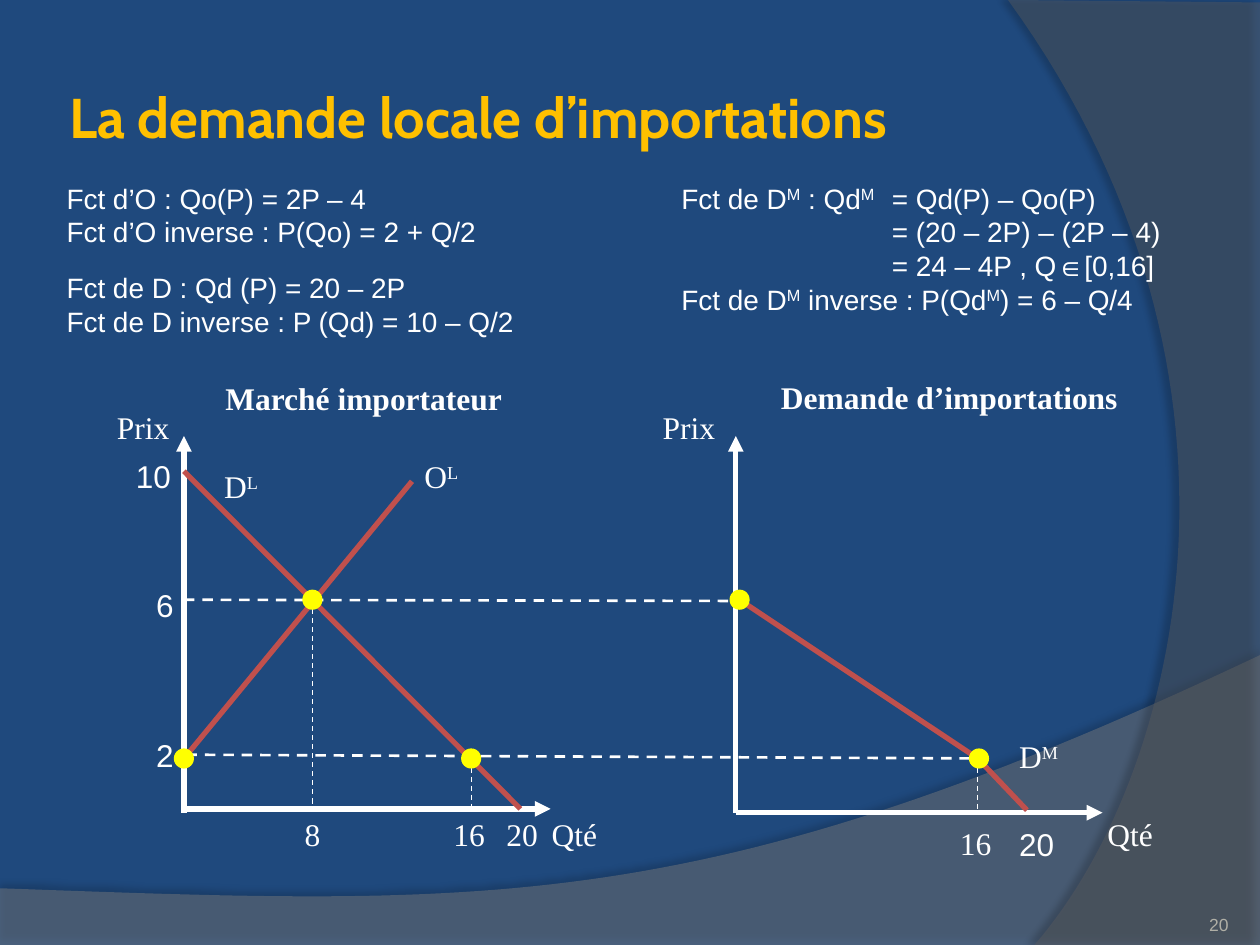
from lxml.etree import SubElement
from pptx import Presentation
from pptx.dml.color import RGBColor
from pptx.enum.dml import MSO_LINE
from pptx.enum.shapes import MSO_CONNECTOR, MSO_SHAPE
from pptx.enum.text import MSO_ANCHOR, PP_ALIGN
from pptx.oxml.ns import qn
from pptx.util import Inches, Pt

NAVY = RGBColor(0x1F, 0x49, 0x7D)
WHITE = RGBColor(0xFF, 0xFF, 0xFF)
GOLD = RGBColor(0xFF, 0xC0, 0x00)
YELLOW = RGBColor(0xFF, 0xFF, 0x00)
RED = RGBColor(0xC0, 0x50, 0x4D)
GREY = RGBColor(0x7F, 0x7F, 0x7F)
DARK_GREY = RGBColor(0x5E, 0x5E, 0x5E)
PALE_GREY = RGBColor(0xB0, 0xAF, 0xA6)

W, H = 10, 7.5
ROW = 0.4
DOT = 0.16
X_LEFT, X_RIGHT = 1.46, 5.84
Y_TOP, Y_BASE, Y_FOOT = 3.46, 6.42, 6.45
Y_SIX, Y_TWO = 4.76, 6.02
X_8, X_16, X_20 = 2.48, 3.74, 4.13
XM_0, XM_16, XM_20 = 5.87, 7.76, 8.15
AXIS_LENGTH = 2.91

SERIF = {"name": "Times New Roman", "size": Pt(18)}
SERIF_BOLD = {**SERIF, "bold": True}
SANS = {"name": "Arial", "size": Pt(18)}
FORMULA = {"name": "Arial", "size": Pt(16)}
TITLE = {"name": "Cabin", "size": Pt(32), "bold": True}
NUMBER = {"name": "Arial", "size": Pt(10)}

AXIS = {"width": Pt(3), "color": WHITE, "arrow": True}
CURVE = {"width": Pt(3), "color": RED}
LEVEL = {"width": Pt(1.5), "color": WHITE, "dash": True}
DROP = {"width": Pt(0.75), "color": WHITE, "dash": True}

WAVES = [
    {"start": (0, 7.05), "corners": [(0, H), (W, H), (W, 5.2)],
     "curve": [(5.59, 7.29), (3.91, 7.19), (0, 7.05)], "end": [],
     "color": GREY, "alpha": 45, "shadow": (35, 4, 3.5, 270)},
    {"start": (W, 0.02), "corners": [(W, H), (8.21, H)],
     "curve": [(9.35, 6.19), (10.18, 3), (8, 0)], "end": [(W, 0.02)],
     "color": DARK_GREY, "alpha": 40, "shadow": (45, 4, 4, 180)},
]

LINES = [
    (AXIS, (X_LEFT, Y_BASE), (X_LEFT + AXIS_LENGTH, Y_BASE)),
    (AXIS, (X_LEFT, Y_FOOT), (X_LEFT, Y_TOP)),
    (AXIS, (X_RIGHT, Y_FOOT), (X_RIGHT + AXIS_LENGTH, Y_FOOT)),
    (AXIS, (X_RIGHT, Y_FOOT), (X_RIGHT, Y_TOP)),
    (CURVE, (X_LEFT, Y_TWO), (3.27, 3.82)),
    (CURVE, (X_LEFT, 3.74), (X_20, Y_BASE)),
    (LEVEL, (X_LEFT, Y_SIX), (XM_0, 4.77)),
    (LEVEL, (1.48, 5.99), (7.85, Y_TWO)),
    (DROP, (X_8, Y_SIX), (X_8, Y_BASE)),
    (DROP, (X_16, Y_TWO), (X_16, Y_BASE)),
    (DROP, (XM_16, Y_TWO), (XM_16, Y_BASE)),
    (CURVE, (XM_0, Y_SIX), (XM_16, Y_TWO)),
    (CURVE, (XM_16, Y_TWO), (XM_20, 6.43)),
]

DOTS = [(X_LEFT, Y_TWO), (X_16, Y_TWO), (XM_0, Y_SIX), (X_8, Y_SIX), (7.77, Y_TWO)]

TEXTS = [
    (1.69, 2.96, 2.42, SERIF_BOLD, ["Marché importateur"]),
    (6.1, 2.95, 2.9, SERIF_BOLD, ["Demande d’importations"]),
    (0.83, 3.19, 0.62, SERIF, ["Prix"]),
    (5.16, 3.19, 0.62, SERIF, ["Prix"]),
    (4.28, Y_BASE, 0.57, SERIF, ["Qté"]),
    (8.69, Y_BASE, 0.57, SERIF, ["Qté"]),
    (0.98, 3.58, 0.48, SANS, ["10"]),
    (1.14, 4.6, 0.34, SANS, ["6"]),
    (1.14, 5.79, 0.34, SANS, ["2"]),
    (2.32, Y_BASE, 0.33, SERIF, ["8"]),
    (3.5, Y_BASE, 0.45, SERIF, ["16"]),
    (3.92, Y_BASE, 0.45, SERIF, ["20"]),
    (7.52, 6.49, 0.45, SERIF, ["16"]),
    (7.99, 6.5, 0.55, SANS, ["20"]),
    (1.68, 3.66, 0.49, SERIF, ["D^L"]),
    (3.27, 3.58, 0.49, SERIF, ["O^L"]),
    (7.99, 5.8, 0.53, SERIF, ["D^M"]),
    (0.43, 1.39, 3.5, FORMULA, ["Fct d’O : Qo(P) = 2P – 4", "Fct d’O inverse : P(Qo) = 2 + Q/2"]),
    (0.43, 2.1, 3.8, FORMULA, ["Fct de D : Qd (P) = 20 – 2P", "Fct de D inverse : P (Qd) = 10 – Q/2"]),
    (5.31, 1.39, 4.57, FORMULA, [
        "Fct de D^M^ : Qd^M^ \t= Qd(P) – Qo(P)",
        "\t= (20 – 2P) – (2P – 4)",
        "\t= 24 – 4P , Q∈[0,16]",
        "Fct de D^M^ inverse : P(Qd^M^) = 6 – Q/4"]),
]


def bezier(points, steps=60):
    for i in range(1, steps + 1):
        t = i / steps
        weights = ((1 - t) ** 3, 3 * t * (1 - t) ** 2, 3 * t * t * (1 - t), t ** 3)
        yield tuple(sum(w * p[axis] for w, p in zip(weights, points)) for axis in (0, 1))


def add_wave(s, wave):
    bend = bezier([wave["corners"][-1], *wave["curve"]])
    points = [*wave["corners"], *bend, *wave["end"]]
    builder = s.shapes.build_freeform(*map(Inches, wave["start"]), scale=1.0)
    builder.add_line_segments([(Inches(x), Inches(y)) for x, y in points])
    sp = builder.convert_to_shape()
    sp.fill.solid()
    sp.fill.fore_color.rgb = wave["color"]
    sp.line.fill.background()
    sp.shadow.inherit = False
    spPr = sp._element.spPr
    color = spPr.find(qn("a:solidFill"))[0]
    SubElement(color, qn("a:alpha"), val=str(wave["alpha"] * 1000))
    alpha, blur, dist, angle = wave["shadow"]
    shadow = SubElement(spPr.find(qn("a:effectLst")), qn("a:outerShdw"),
                        blurRad=str(Pt(blur)), dist=str(Pt(dist)), dir=str(angle * 60000))
    black = SubElement(shadow, qn("a:srgbClr"), val="000000")
    SubElement(black, qn("a:alpha"), val=str(alpha * 1000))


def add_line(s, style, start, end):
    sp = s.shapes.add_connector(MSO_CONNECTOR.STRAIGHT, *map(Inches, start + end))
    sp.line.width = style["width"]
    sp.line.color.rgb = style["color"]
    if style.get("dash"):
        sp.line.dash_style = MSO_LINE.DASH
    if style.get("arrow"):
        SubElement(sp.line._get_or_add_ln(), qn("a:tailEnd"), type="triangle")
    SubElement(sp._element.spPr, qn("a:effectLst"))


def add_dot(s, x, y):
    box = (x - DOT / 2, y - DOT / 2, DOT, DOT)
    sp = s.shapes.add_shape(MSO_SHAPE.FLOWCHART_CONNECTOR, *map(Inches, box))
    sp.shadow.inherit = False
    sp.fill.solid()
    sp.fill.fore_color.rgb = YELLOW
    sp.line.fill.background()


def add_text(s, x, y, w, h, font, lines, color=WHITE, wrap=False, align=PP_ALIGN.LEFT, **frame):
    tf = s.shapes.add_textbox(*map(Inches, (x, y, w, h))).text_frame
    tf.word_wrap = wrap
    for key, value in frame.items():
        setattr(tf, key, value)
    for i, line in enumerate(lines):
        p = tf.paragraphs[0] if i == 0 else tf.add_paragraph()
        p.alignment = align
        if "\t" in line:
            tabs = SubElement(p._p.get_or_add_pPr(), qn("a:tabLst"))
            SubElement(tabs, qn("a:tab"), pos=str(Inches(1.67)), algn="l")
        for j, part in enumerate(line.split("^")):
            if part:
                r = p.add_run()
                r.text = part
                for key, value in font.items():
                    setattr(r.font, key, value)
                r.font.color.rgb = color
                if j % 2:
                    r.font._element.set("baseline", "30000")


def main():
    prs = Presentation()
    prs.slide_width, prs.slide_height = Inches(W), Inches(H)
    s = prs.slides.add_slide(prs.slide_layouts[6])
    s.background.fill.solid()
    s.background.fill.fore_color.rgb = NAVY
    for wave in WAVES:
        add_wave(s, wave)
    for line in LINES:
        add_line(s, *line)
    for dot in DOTS:
        add_dot(s, *dot)
    margins = ("margin_left", "margin_right", "margin_top", "margin_bottom")
    add_text(s, 0.5, 0.3, 9.5, 1.25, TITLE, ["La demande locale d’importations"], GOLD, True,
             vertical_anchor=MSO_ANCHOR.MIDDLE, **dict.fromkeys(margins, Inches(0.05)))
    for x, y, w, font, lines in TEXTS:
        height = ROW if len(lines) == 1 else 0.1 + 0.27 * len(lines)
        add_text(s, x, y, w, height, font, lines, wrap=len(lines) > 2)
    add_text(s, 8.92, 7.02, 0.83, ROW, NUMBER, ["20"], PALE_GREY, True, PP_ALIGN.RIGHT,
             vertical_anchor=MSO_ANCHOR.BOTTOM, **dict.fromkeys(margins, 0))
    prs.save("out.pptx")


if __name__ == "__main__":
    main()
